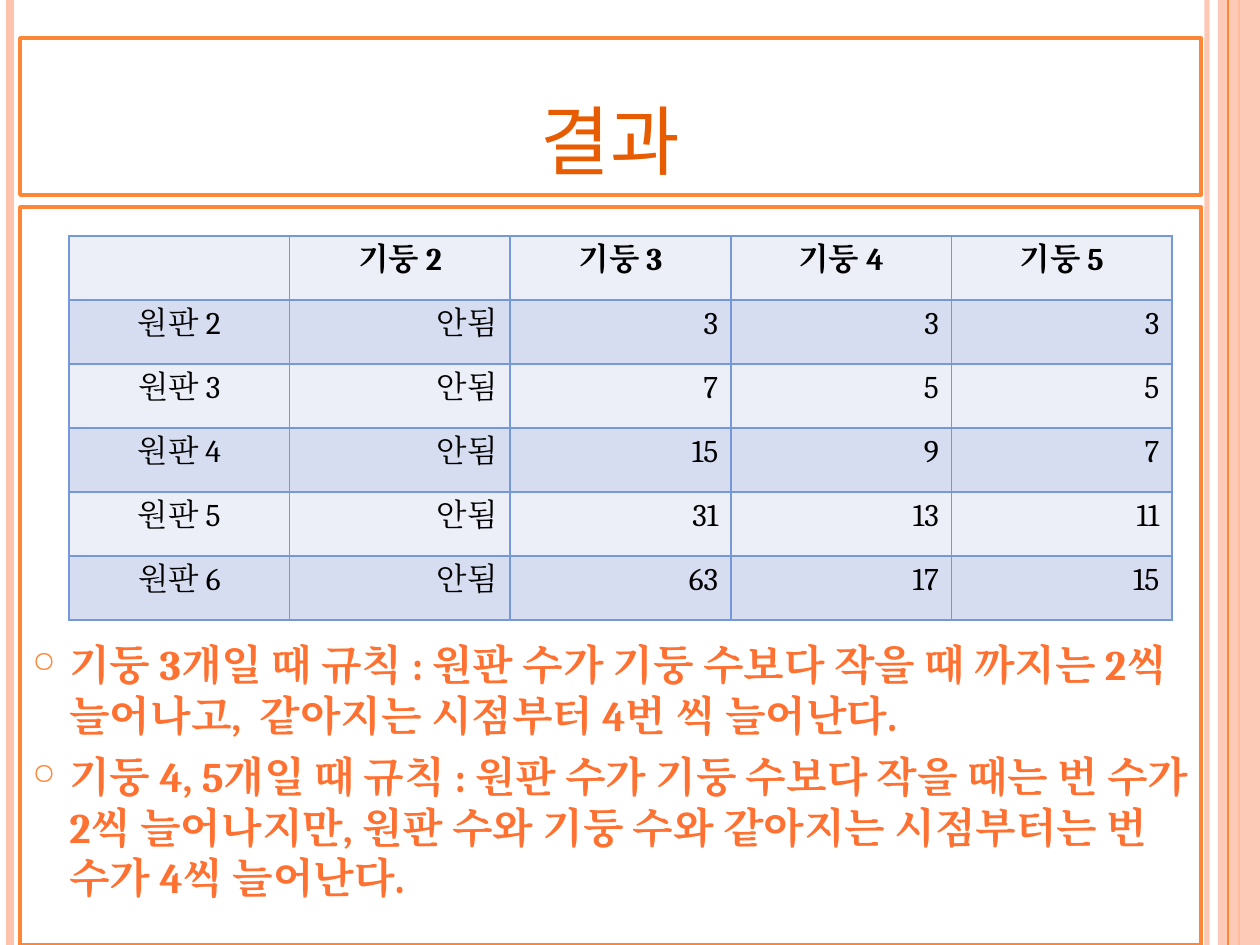
"""Build the results slide: title, table of move counts and the two rules found."""
import lxml.etree
import pptx
import pptx.dml.color
import pptx.enum.shapes
import pptx.enum.text
import pptx.oxml.ns
import pptx.util

EMU_PER_PX = 914400 / 126
SLIDE_WIDTH, SLIDE_HEIGHT = 1260, 945
COLORS = {
    "paper": "FFFFFF", "frame": "FE8637", "stripe": "FEC3AE",
    "title": "E75C01", "rule": "FE7131", "text": "000000",
    "border": "7598D9", "light": "ECEFF8", "dark": "D6DDF1",
}
ALIGN = pptx.enum.text.PP_ALIGN
ANCHOR = pptx.enum.text.MSO_ANCHOR
BODY_FONT, TITLE_FONT = "Cambria", "Noto Sans CJK KR"
STRIPES = [(1207, "stripe", 3, 93), (10, "stripe", 4.5, 100),
           (1239, "frame", 1.5, 100), (1228, "frame", 0.75, 100)]
PILLARS = ["기둥 2", "기둥 3", "기둥 4", "기둥 5"]
MOVES = {
    "원판 2": ["안됨", 3, 3, 3],
    "원판 3": ["안됨", 7, 5, 5],
    "원판 4": ["안됨", 15, 9, 7],
    "원판 5": ["안됨", 31, 13, 11],
    "원판 6": ["안됨", 63, 17, 15],
}
RULES = [
    "기둥 3개일 때 규칙 : 원판 수가 기둥 수보다 작을 때 까지는 2씩 늘어나고,  같아지는 시점부터 4번 씩 늘어난다.",
    "기둥 4, 5개일 때 규칙 : 원판 수가 기둥 수보다 작을 때는 번 수가 2씩 늘어나지만, "
    "원판 수와 기둥 수와 같아지는 시점부터는 번 수가 4씩 늘어난다.",
]


def px(length):
    """Turn pixels into EMU."""
    return pptx.util.Emu(round(length * EMU_PER_PX))


def rgb(name):
    """Look up a named colour."""
    return pptx.dml.color.RGBColor.from_string(COLORS[name])


def apply(target, formats):
    """Set every attribute in the dict of format values."""
    for attribute, value in formats.items():
        setattr(target, attribute, value)


def add_xml(parent, tag, **attributes):
    """Append a DrawingML element and return it."""
    return lxml.etree.SubElement(parent, pptx.oxml.ns.qn(tag), attributes)


def add_alpha(owner, percent):
    """Make the first solid colour below the element translucent."""
    color = next(owner.iter(pptx.oxml.ns.qn("a:srgbClr")))
    add_xml(color, "a:alpha", val=str(percent * 1000))


def paint(shape, fill, line=None):
    """Give a shape its fill and its optional frame."""
    shape.fill.solid()
    shape.fill.fore_color.rgb = rgb(fill)
    if line:
        shape.line.color.rgb = rgb(line)
        shape.line.width = pptx.util.Pt(2)
    else:
        shape.line.fill.background()


def write(paragraph, text, color, font_name, size, bold=False):
    """Add one formatted run, with the same font for Korean and Latin."""
    run = paragraph.add_run()
    run.text = text
    apply(run.font, {"name": font_name, "size": pptx.util.Pt(size), "bold": bold})
    run.font.color.rgb = rgb(color)
    add_xml(run.font._element, "a:ea", typeface=font_name)
    return run


def add_stripe(slide, x, color, width, opacity):
    """Draw a full-height vertical line."""
    stripe = slide.shapes.add_connector(
        pptx.enum.shapes.MSO_CONNECTOR.STRAIGHT, px(x), 0, px(x), px(SLIDE_HEIGHT))
    stripe.line.color.rgb = rgb(color)
    stripe.line.width = pptx.util.Pt(width)
    properties = stripe._element.spPr
    add_xml(properties, "a:effectLst")
    if opacity < 100:
        add_alpha(properties, opacity)


def add_box(slide, left, top, width, height, fill, line=None):
    """Draw a rectangle without shadow."""
    box = slide.shapes.add_shape(pptx.enum.shapes.MSO_SHAPE.RECTANGLE,
                                 px(left), px(top), px(width), px(height))
    box.shadow.inherit = False
    paint(box, fill, line)
    return box


def format_title(slide, text):
    """Place and fill the framed title."""
    title = slide.shapes.title
    apply(title, {"left": px(20), "top": px(38), "width": px(1181), "height": px(157)})
    paint(title, "paper", "frame")
    title.text_frame.vertical_anchor = ANCHOR.BOTTOM
    paragraph = title.text_frame.paragraphs[0]
    paragraph.alignment = ALIGN.CENTER
    write(paragraph, text, "title", TITLE_FONT, 54).font._element.set("cap", "small")


def add_rules(slide):
    """Add the framed body with its bulleted rules below the table area."""
    body = add_box(slide, 20, 207, 1181, 738, "paper", "frame")
    frame = body.text_frame
    apply(frame, {"word_wrap": True, "vertical_anchor": ANCHOR.TOP, "margin_top": px(431)})
    for index, rule in enumerate(RULES):
        paragraph = frame.add_paragraph() if index else frame.paragraphs[0]
        apply(paragraph, {"alignment": ALIGN.LEFT, "space_before": pptx.util.Pt(6),
                          "line_spacing": pptx.util.Pt(29)})
        write(paragraph, rule, "rule", BODY_FONT, 24, True)
        properties = paragraph._p.get_or_add_pPr()
        properties.set("marL", str(px(37)))
        properties.set("indent", str(px(-37)))
        add_xml(add_xml(properties, "a:buClr"), "a:srgbClr", val=COLORS["frame"])
        add_xml(properties, "a:buSzPct", val="70000")
        add_xml(properties, "a:buChar", char="○")


def format_cell(cell, text, alignment, fill, bold):
    """Fill, border and write one table cell."""
    properties = cell._tc.get_or_add_tcPr()
    for side in ("a:lnL", "a:lnR", "a:lnT", "a:lnB"):
        border = add_xml(properties, side, w=str(pptx.util.Pt(1)))
        add_xml(add_xml(border, "a:solidFill"), "a:srgbClr", val=COLORS["border"])
    cell.fill.solid()
    cell.fill.fore_color.rgb = rgb(fill)
    paragraph = cell.text_frame.paragraphs[0]
    paragraph.alignment = alignment
    if text:
        write(paragraph, text, "text", BODY_FONT, 18, bold)


def add_moves_table(slide):
    """Add the table of moves by number of discs and pillars."""
    rows = [["", *PILLARS]] + [[disc, *counts] for disc, counts in MOVES.items()]
    table = slide.shapes.add_table(len(rows), len(rows[0]), px(69), px(236),
                                   px(1103), px(64 * len(rows))).table
    for row_index, values in enumerate(rows):
        is_header = row_index == 0
        for column_index, value in enumerate(values):
            centred = is_header or column_index == 0
            format_cell(table.cell(row_index, column_index), str(value),
                        ALIGN.CENTER if centred else ALIGN.RIGHT,
                        "dark" if row_index % 2 else "light", is_header)


def main():
    """Build and save the slide."""
    deck = pptx.Presentation()
    apply(deck, {"slide_width": px(SLIDE_WIDTH), "slide_height": px(SLIDE_HEIGHT)})
    slide = deck.slides.add_slide(deck.slide_layouts[5])
    for stripe in STRIPES[:3]:
        add_stripe(slide, *stripe)
    band = add_box(slide, 1218, 0, 42, SLIDE_HEIGHT, "stripe")
    add_alpha(band._element.spPr, 87)
    add_stripe(slide, *STRIPES[3])
    format_title(slide, "결과")
    add_rules(slide)
    add_moves_table(slide)
    deck.save("out.pptx")


if __name__ == "__main__":
    main()
